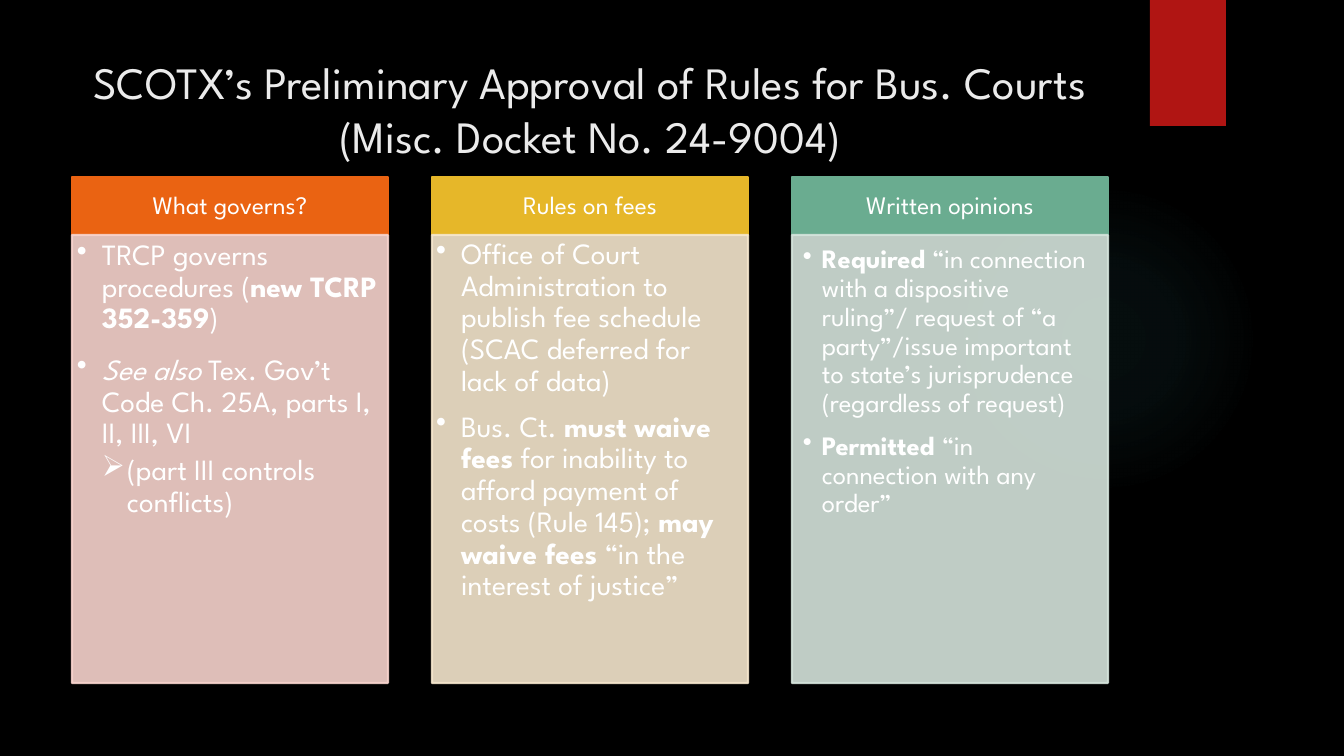
import pptx
import pptx.dml.color
import pptx.enum.shapes
import pptx.enum.text
import pptx.oxml
import pptx.oxml.ns
import pptx.util
from lxml import etree

PX = 12192000 / 1344
FONT = "League Spartan"
WHITE = "FFFFFF"
SHAPE = pptx.enum.shapes.MSO_SHAPE
ANCHOR = pptx.enum.text.MSO_ANCHOR
ALIGN = pptx.enum.text.PP_ALIGN
qn = pptx.oxml.ns.qn

COLUMN_LEFT, COLUMN_STEP, COLUMN_WIDTH = 72, 360, 316
HEADER_TOP, HEADER_HEIGHT, BODY_HEIGHT = 177, 58, 448

# Paragraph: (bullet, level, space before in pt, [(text, style), ...])
COLUMNS = [
    dict(header="What governs?", accent="EA6312", tint="F7D3CC",
         size=21, hang=25, insets=(5, 5, 7, 8), paragraphs=[
             ("•", 1, 0, [("TRCP governs procedures (", ""),
                          ("new TCRP 352-359", "b"), (")", "")]),
             ("•", 1, 14, [("See also ", "i"),
                           ("Tex. Gov’t Code Ch. 25A, parts I, II, III, VI", "")]),
             ("➢", 2, 3.5, [("(part III controls conflicts)", "")]),
         ]),
    dict(header="Rules on fees", accent="E6B729", tint="F5E6CD",
         size=21, hang=25, insets=(4, 4, 5, 5), paragraphs=[
             ("•", 1, 0, [("Office of Court Administration to publish fee schedule "
                           "(SCAC deferred for lack of data)", "")]),
             ("•", 1, 10, [("Bus. Ct. ", ""), ("must waive fees", "b"),
                           (" for inability to afford payment of costs (Rule 145); ", ""),
                           ("may waive fees", "b"),
                           (" “in the interest of justice”", "")]),
         ]),
    dict(header="Written opinions", accent="6AAC90", tint="D4E3DB",
         size=19, hang=19, insets=(11, 11, 15, 17), paragraphs=[
             ("•", 1, 0, [("Required", "b"),
                          (" “in connection with a dispositive ruling”/ request of “a "
                           "party”/issue important to state’s jurisprudence "
                           "(regardless of request)", "")]),
             ("•", 1, 10, [("Permitted ", "b"),
                           ("“in connection with any order”", "")]),
         ]),
]


def px(n):
    return pptx.util.Emu(round(n * PX))


def rgb(color):
    return pptx.dml.color.RGBColor.from_string(color)


def add_run(p, text, size, color=WHITE, style=""):
    r = p.add_run()
    r.text = text
    r.font.name = FONT
    r.font.size = pptx.util.Pt(size)
    r.font.color.rgb = rgb(color)
    r.font.bold = style == "b"
    r.font.italic = style == "i"


def set_alpha(fill_format, percent):
    """Make a solid fill partly transparent."""
    clr = fill_format.fore_color._xFill.find(qn("a:srgbClr"))
    etree.SubElement(clr, qn("a:alpha"), val=str(percent * 1000))


def add_box(slide, x, y, w, h, color, alpha=None):
    """Add a rectangle with fill and outline of one colour."""
    sp = slide.shapes.add_shape(SHAPE.RECTANGLE, px(x), px(y), px(w), px(h))
    sp.shadow.inherit = False
    sp.line.width = pptx.util.Pt(1.5)
    for fill in (sp.fill, sp.line.fill):
        fill.solid()
        fill.fore_color.rgb = rgb(color)
        if alpha:
            set_alpha(fill, alpha)
    return sp


def setup_frame(sp, insets, anchor):
    tf = sp.text_frame
    tf.word_wrap = True
    tf.vertical_anchor = anchor
    tf.margin_left, tf.margin_top, tf.margin_right, tf.margin_bottom = map(px, insets)
    return tf


def set_bullet(p, char, level, hang):
    pPr = p._p.get_or_add_pPr()
    pPr.set("marL", str(px(hang * level)))
    pPr.set("indent", str(-px(hang)))
    etree.SubElement(pPr, qn("a:buChar"), char=char)


def add_column(slide, x, column):
    header = add_box(slide, x, HEADER_TOP, COLUMN_WIDTH, HEADER_HEIGHT, column["accent"])
    p = setup_frame(header, (14, 8, 14, 8), ANCHOR.MIDDLE).paragraphs[0]
    p.alignment = ALIGN.CENTER
    p.line_spacing = 0.9
    add_run(p, column["header"], 18)

    body = add_box(slide, x, HEADER_TOP + HEADER_HEIGHT, COLUMN_WIDTH, BODY_HEIGHT,
                   column["tint"], 90)
    tf = setup_frame(body, column["insets"], ANCHOR.TOP)
    for i, (char, level, before, runs) in enumerate(column["paragraphs"]):
        p = tf.add_paragraph() if i else tf.paragraphs[0]
        p.alignment = ALIGN.LEFT
        p.level = level - 1
        p.line_spacing = 0.9
        if before:
            p.space_before = pptx.util.Pt(before)
        set_bullet(p, char, level, column["hang"])
        for text, style in runs:
            add_run(p, text, column["size"], style=style)


def add_glow(slide, x, y, size, color, stops):
    """Add a circle with a radial fade; stops are (position, opacity) in percent."""
    sp = slide.shapes.add_shape(SHAPE.OVAL, px(x), px(y), px(size), px(size))
    sp.shadow.inherit = False
    sp.line.fill.background()
    marks = "".join(
        f'<a:gs pos="{pos * 1000}"><a:srgbClr val="{color}">'
        f'<a:alpha val="{alpha * 1000}"/></a:srgbClr></a:gs>' for pos, alpha in stops)
    grad = pptx.oxml.parse_xml(
        f'<a:gradFill {pptx.oxml.ns.nsdecls("a")}><a:gsLst>{marks}</a:gsLst>'
        '<a:path path="circle"><a:fillToRect l="50000" t="50000" r="50000" b="50000"/>'
        '</a:path></a:gradFill>')
    sp._element.spPr.find(qn("a:prstGeom")).addnext(grad)


def set_title(slide, text):
    title = slide.shapes.title
    title.left, title.top, title.width, title.height = px(72), px(50), px(1037), px(144)
    tf = title.text_frame
    tf.auto_size = pptx.enum.text.MSO_AUTO_SIZE.NONE
    tf.word_wrap = True
    tf.vertical_anchor = ANCHOR.TOP
    p = tf.paragraphs[0]
    p.alignment = ALIGN.CENTER
    add_run(p, text, 32, "EBEBEB")


def main():
    prs = pptx.Presentation()
    prs.slide_width, prs.slide_height = px(1344), px(756)
    slide = prs.slides.add_slide(prs.slide_layouts[5])
    slide.background.fill.solid()
    slide.background.fill.fore_color.rgb = rgb("000000")

    add_glow(slide, 949, 184, 310, "50B9C1", [(0, 7), (36, 6), (69, 0)])
    ribbon = add_box(slide, 1150, 0, 76, 126, "B01513")
    ribbon.line.fill.background()
    set_title(slide, "SCOTX’s Preliminary Approval of Rules for Bus. Courts "
                     "(Misc. Docket No. 24-9004)")
    for i, column in enumerate(COLUMNS):
        add_column(slide, COLUMN_LEFT + i * COLUMN_STEP, column)
    prs.save("out.pptx")


if __name__ == "__main__":
    main()
